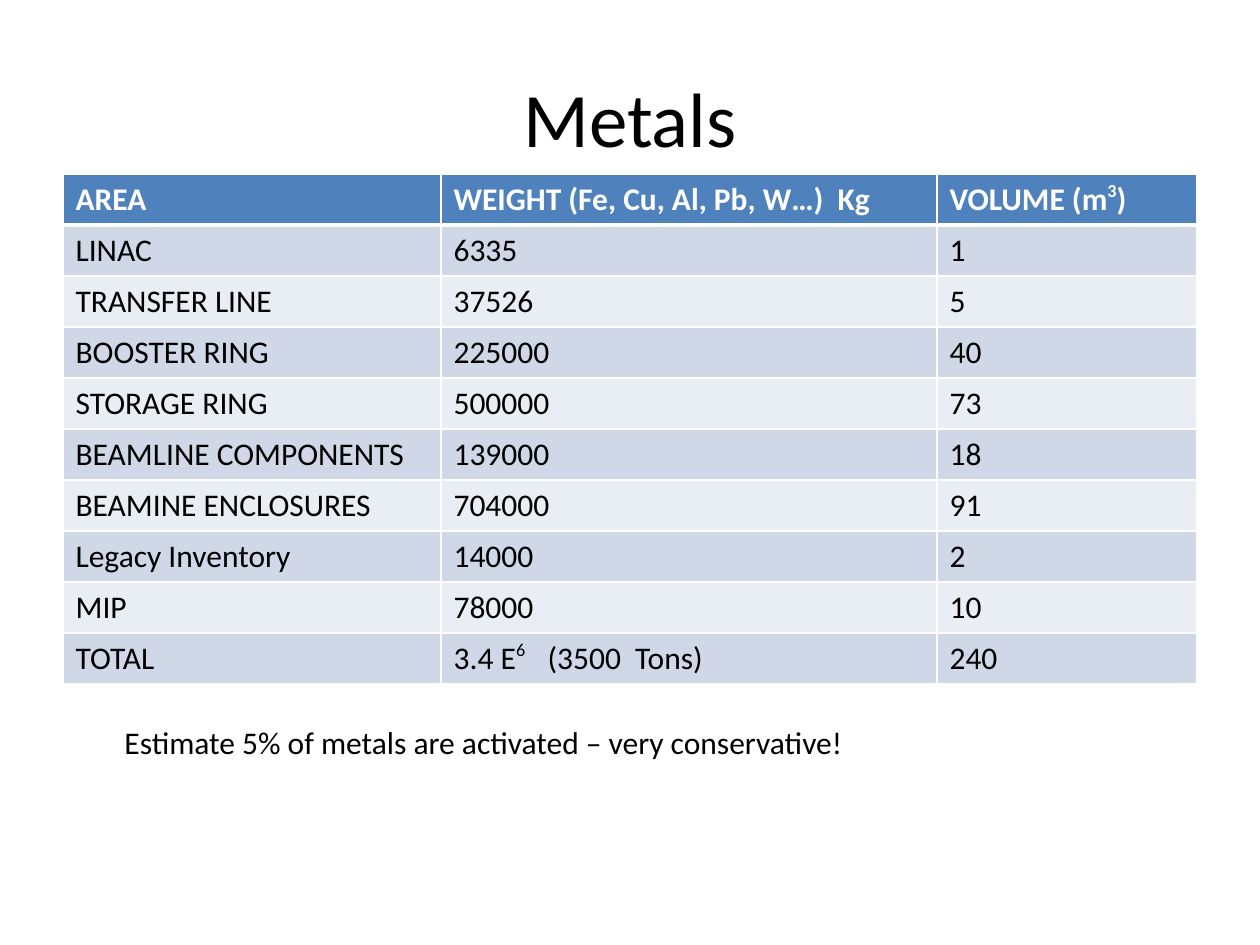
from lxml.etree import SubElement
from pptx import Presentation
from pptx.dml.color import RGBColor
from pptx.enum.text import MSO_ANCHOR, PP_ALIGN
from pptx.oxml.ns import qn
from pptx.util import Emu, Pt

PX_PER_INCH = 126
FONT = "Calibri"
BLACK, WHITE = "000000", "FFFFFF"
HEADER_FILL = "4F81BD"
BAND_FILLS = ["D0D8E8", "E9EDF4"]

COLUMN_WIDTHS = [378, 496, 260]
ROW_HEIGHT = 51
# Text between carets is superscript.
METALS = [
    ["AREA", "WEIGHT (Fe, Cu, Al, Pb, W…)  Kg", "VOLUME (m^3^)"],
    ["LINAC", "6335", "1"],
    ["TRANSFER LINE", "37526", "5"],
    ["BOOSTER RING", "225000", "40"],
    ["STORAGE RING", "500000", "73"],
    ["BEAMLINE COMPONENTS", "139000", "18"],
    ["BEAMINE ENCLOSURES", "704000", "91"],
    ["Legacy Inventory", "14000", "2"],
    ["MIP", "78000", "10"],
    ["TOTAL", "3.4 E^6  ^  (3500  Tons)", "240"],
]


def px(length):
    return Emu(round(length * 914400 / PX_PER_INCH))


def rgb(hex_color):
    return RGBColor.from_string(hex_color)


def add_runs(paragraph, text, size, color=BLACK, bold=False):
    """Add text run by run, raising the parts between carets."""
    for index, part in enumerate(text.split("^")):
        run = paragraph.add_run()
        run.text = part
        run.font.name = FONT
        run.font.size = Pt(size)
        run.font.bold = bold
        run.font.color.rgb = rgb(color)
        if index % 2:
            run.font._element.set("baseline", "40000")


def add_text(slide, text, box, size, align=PP_ALIGN.LEFT, anchor=MSO_ANCHOR.TOP):
    frame = slide.shapes.add_textbox(*map(px, box)).text_frame
    frame.word_wrap = True
    frame.vertical_anchor = anchor
    paragraph = frame.paragraphs[0]
    paragraph.alignment = align
    add_runs(paragraph, text, size)


def set_borders(cell, top, bottom):
    """Draw white borders; top and bottom widths are in points."""
    properties = cell._tc.get_or_add_tcPr()
    for side, width in [("L", 1), ("R", 1), ("T", top), ("B", bottom)]:
        line = SubElement(properties, qn(f"a:ln{side}"), w=str(Pt(width)))
        fill = SubElement(line, qn("a:solidFill"))
        SubElement(fill, qn("a:srgbClr"), val=WHITE)


def add_metals_table(slide, left, top):
    width, height = sum(COLUMN_WIDTHS), ROW_HEIGHT * len(METALS)
    table = slide.shapes.add_table(
        len(METALS), len(COLUMN_WIDTHS), *map(px, (left, top, width, height))
    ).table
    for column, column_width in zip(table.columns, COLUMN_WIDTHS):
        column.width = px(column_width)
    for row_index, (row, texts) in enumerate(zip(table.rows, METALS)):
        row.height = px(ROW_HEIGHT)
        header = row_index == 0
        fill = HEADER_FILL if header else BAND_FILLS[(row_index - 1) % 2]
        for cell, text in zip(row.cells, texts):
            set_borders(cell, 3 if row_index == 1 else 1, 3 if header else 1)
            cell.fill.solid()
            cell.fill.fore_color.rgb = rgb(fill)
            add_runs(cell.text_frame.paragraphs[0], text, 18,
                     WHITE if header else BLACK, header)


def main():
    presentation = Presentation()
    presentation.slide_width = px(1260)
    presentation.slide_height = px(945)
    slide = presentation.slides.add_slide(presentation.slide_layouts[6])
    add_text(slide, "Metals", (63, 38, 1134, 158), 44,
             PP_ALIGN.CENTER, MSO_ANCHOR.MIDDLE)
    add_metals_table(slide, 63, 174)
    add_text(slide, "Estimate 5% of metals are activated – very conservative!",
             (112, 717, 1065, 89), 18)
    presentation.save("out.pptx")


if __name__ == "__main__":
    main()
